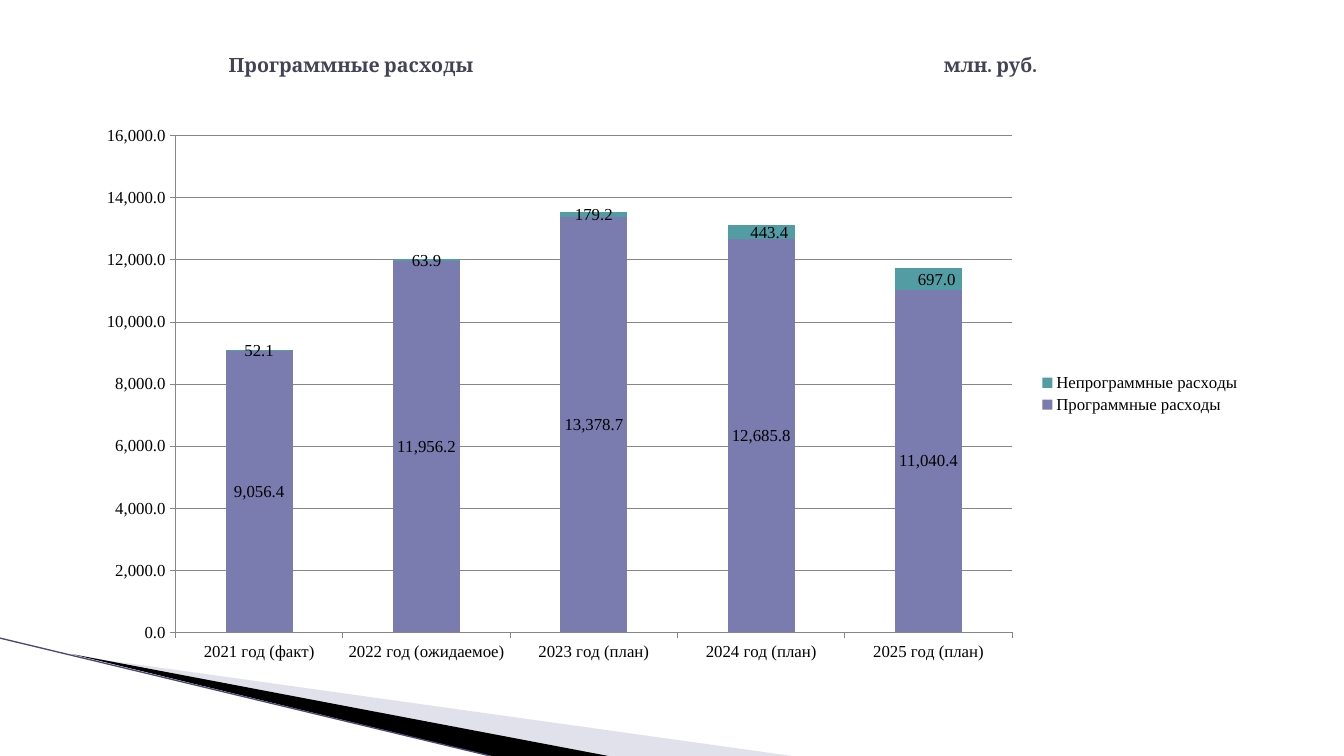
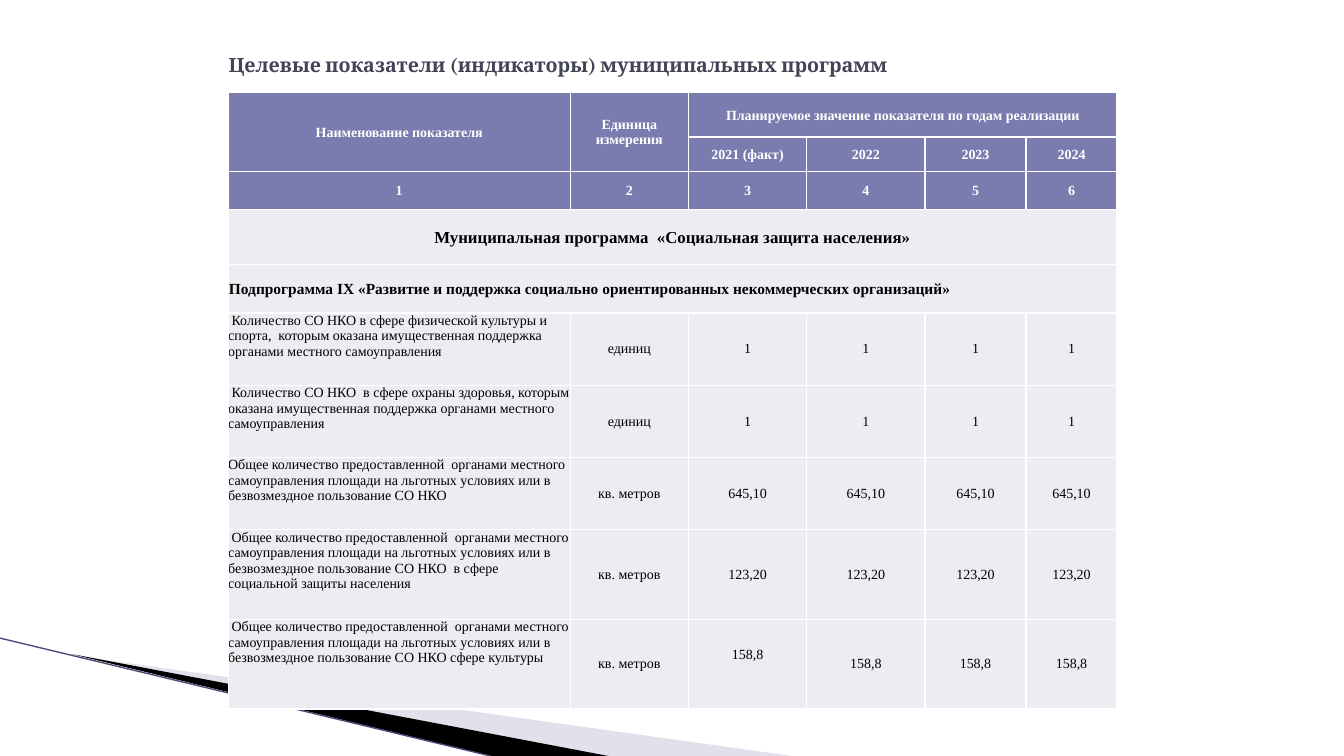
"""Build two slides on municipal programme spending and its target indicators."""
from lxml.etree import SubElement
from pptx import Presentation
from pptx.chart.data import CategoryChartData
from pptx.dml.color import RGBColor
from pptx.enum.chart import XL_CHART_TYPE as ChartType, XL_LEGEND_POSITION as LegendPos, XL_TICK_MARK as Tick
from pptx.enum.shapes import MSO_CONNECTOR as Connector
from pptx.enum.text import MSO_ANCHOR as Anchor, PP_ALIGN as Align
from pptx.oxml import parse_xml
from pptx.oxml.ns import nsdecls, qn
from pptx.util import Cm, Pt

WHITE = RGBColor(0xFF, 0xFF, 0xFF)
BLACK = RGBColor(0x00, 0x00, 0x00)
INK = RGBColor(0x42, 0x44, 0x56)
VIOLET = RGBColor(0x7A, 0x7B, 0xAE)
TEAL = RGBColor(0x52, 0x9C, 0xA4)
LILAC = RGBColor(0xB6, 0xB6, 0xD1)
PALE = RGBColor(0xEC, 0xEC, 0xF2)
EDGE = RGBColor(0x4A, 0x4A, 0x78)
GRID = RGBColor(0x86, 0x86, 0x86)
TITLE_FONT, BODY_FONT = "Cambria", "Times New Roman"
NUMBER = "#,##0.0"

SWOOSHES = [
    (LILAC, 40, [(1.85, 16.52), (19.96, 19.05), (15.3, 19.05)]),
    (BLACK, 100, [(1.8, 16.48), (15.33, 19.05), (12.38, 19.05)]),
]


def style(font, name, size, color, bold=False):
    font.name, font.size, font.bold = name, Pt(size), bold
    font.color.rgb = color


def chart_layout(target, **values):
    layout = parse_xml(f"<c:layout {nsdecls('c')}><c:manualLayout/></c:layout>")
    for tag, value in values.items():
        SubElement(layout[0], qn(f"c:{tag}")).set("val", str(value))
    for old in target.findall(qn("c:layout")):
        target.remove(old)
    target.insert(1 if target.find(qn("c:idx")) is not None else 0, layout)


prs = Presentation()
prs.slide_width, prs.slide_height = Cm(33.87), Cm(19.05)
slides = []
for heading in ("Программные расходы\tмлн. руб.", "Целевые показатели (индикаторы) муниципальных программ"):
    slide = prs.slides.add_slide(prs.slide_layouts[6])
    slides.append(slide)
    for color, opacity, points in SWOOSHES:
        start, *rest = [(Cm(x), Cm(y)) for x, y in points]
        builder = slide.shapes.build_freeform(*start)
        builder.add_line_segments(rest, close=True)
        swoosh = builder.convert_to_shape()
        swoosh.shadow.inherit = False
        swoosh.fill.solid()
        swoosh.fill.fore_color.rgb = color
        swoosh.line.fill.background()
        if opacity < 100:
            tint = swoosh.element.xpath(".//a:solidFill/a:srgbClr")[0]
            SubElement(tint, qn("a:alpha")).set("val", str(opacity * 1000))
    edge = slide.shapes.add_connector(Connector.STRAIGHT, 0, Cm(16.08), Cm(12.36), Cm(19.05))
    edge.line.color.rgb, edge.line.width = EDGE, Pt(0.95)
    SubElement(edge.element.spPr, qn("a:effectLst"))

    title = slide.shapes.add_textbox(Cm(5.51), Cm(0.76), Cm(22.86), Cm(1.75)).text_frame
    title.word_wrap, title.vertical_anchor = True, Anchor.MIDDLE
    paragraph = title.paragraphs[0]
    if "\t" in heading:
        tabs = SubElement(paragraph._p.get_or_add_pPr(), qn("a:tabLst"))
        stop = SubElement(tabs, qn("a:tab"))
        stop.set("pos", str(Cm(18.03)))
        stop.set("algn", "l")
    run = paragraph.add_run()
    run.text = heading
    style(run.font, TITLE_FONT, 14, INK, True)

spending_slide, targets_slide = slides

spending = CategoryChartData(number_format=NUMBER)
spending.categories = ["2021 год (факт)", "2022 год (ожидаемое)", "2023 год (план)", "2024 год (план)", "2025 год (план)"]
spending.add_series("Программные расходы", (9056.4, 11956.2, 13378.7, 12685.8, 11040.4))
spending.add_series("Непрограммные расходы", (52.1, 63.9, 179.2, 443.4, 697.0))
chart = spending_slide.shapes.add_chart(
    ChartType.COLUMN_STACKED, Cm(2.13), Cm(2.92), Cm(29.41), Cm(14), spending).chart
style(chart.font, BODY_FONT, 12, BLACK)
chart.has_title = False
chart.has_legend = True
chart.legend.position, chart.legend.include_in_layout = LegendPos.RIGHT, False
style(chart.legend.font, BODY_FONT, 12, BLACK)
for axis in (chart.category_axis, chart.value_axis):
    axis.major_tick_mark, axis.minor_tick_mark = Tick.OUTSIDE, Tick.NONE
    axis.format.line.color.rgb = GRID
    style(axis.tick_labels.font, BODY_FONT, 12, BLACK)
amounts = chart.value_axis
amounts.minimum_scale, amounts.maximum_scale, amounts.major_unit = 0, 16000, 2000
amounts.has_major_gridlines = True
amounts.major_gridlines.format.line.color.rgb = GRID
amounts.tick_labels.number_format, amounts.tick_labels.number_format_is_linked = NUMBER, False
columns = chart.plots[0]
columns.gap_width, columns.overlap, columns.vary_by_categories = 150, 100, False
for series, color in zip(columns.series, (VIOLET, TEAL)):
    series.format.fill.solid()
    series.format.fill.fore_color.rgb = color
    labels = series.data_labels
    labels.show_value = True
    labels.number_format, labels.number_format_is_linked = NUMBER, False
    style(labels.font, BODY_FONT, 12, BLACK)
for index in (3, 4):
    style(columns.series[1].points[index].data_label.font, BODY_FONT, 12, BLACK)
for label in chart.element.xpath(".//c:dLbl"):
    label.insert(1, parse_xml(f'<c:numFmt {nsdecls("c")} formatCode="{NUMBER}" sourceLinked="0"/>'))
    chart_layout(label, x=0.007, y=0.002)
chart_layout(chart.element.xpath(".//c:plotArea")[0], layoutTarget="inner",
             xMode="edge", yMode="edge", x=0.078, y=0.036, w=0.717, h=0.894)

AREA = "Общее количество предоставленной  органами местного самоуправления площади на льготных условиях или в безвозмездное пользование СО НКО"
ROWS = [
    ["Наименование показателя", "Единица измерения", "Планируемое значение показателя по годам реализации"],
    ["", "", "2021 (факт)", "2022", "2023", "2024"],
    ["1", "2", "3", "4", "5", "6"],
    ["Муниципальная программа  «Социальная защита населения»"],
    ["Подпрограмма IX «Развитие и поддержка социально ориентированных некоммерческих организаций»"],
    [" Количество СО НКО в сфере физической культуры и спорта,  которым оказана имущественная поддержка органами местного самоуправления", "единиц"] + ["1"] * 4,
    [" Количество СО НКО  в сфере охраны здоровья, которым оказана имущественная поддержка органами местного самоуправления", "единиц"] + ["1"] * 4,
    [AREA, "кв. метров"] + ["645,10"] * 4,
    [f" {AREA}  в сфере социальной защиты населения", "кв. метров"] + ["123,20"] * 4,
    [f" {AREA} сфере культуры", "кв. метров"] + ["158,8"] * 4,
]
WIDTHS = [8.62, 2.98, 2.98, 2.98, 2.55, 2.29]
HEIGHTS = [1.11, 0.8, 0.96, 1.39, 1.22, 1.82, 1.82, 1.82, 2.26, 2.26]
MERGES = [(0, 0, 1, 0), (0, 1, 1, 1), (0, 2, 0, 5), (3, 0, 3, 5), (4, 0, 4, 5)]
HEADER_ROWS, PROGRAMME_ROW, SUBPROGRAMME_ROW = 3, 3, 4

targets = targets_slide.shapes.add_table(
    len(ROWS), len(WIDTHS), Cm(5.75), Cm(2.34), Cm(sum(WIDTHS)), Cm(sum(HEIGHTS))).table
targets.first_row = targets.horz_banding = False
for column, width in zip(targets.columns, WIDTHS):
    column.width = Cm(width)
for row, height in zip(targets.rows, HEIGHTS):
    row.height = Cm(height)
for top, left, bottom, right in MERGES:
    targets.cell(top, left).merge(targets.cell(bottom, right))
for r, texts in enumerate(ROWS):
    is_header, is_indicator = r < HEADER_ROWS, r > SUBPROGRAMME_ROW
    size = {PROGRAMME_ROW: 12, SUBPROGRAMME_ROW: 11}.get(r, 10)
    for c in range(len(WIDTHS)):
        cell = targets.cell(r, c)
        is_name = is_indicator and c == 0
        cell.margin_left = cell.margin_right = cell.margin_top = Cm(0 if is_indicator else 0.02)
        cell.margin_bottom = 0
        cell.vertical_anchor = Anchor.TOP if is_name else Anchor.MIDDLE
        cell.fill.solid()
        cell.fill.fore_color.rgb = VIOLET if is_header else PALE
        for position, side in enumerate(("lnL", "lnR", "lnT", "lnB")):
            cell._tc.get_or_add_tcPr().insert(position, parse_xml(
                f'<a:{side} {nsdecls("a")} w="12700"><a:solidFill><a:srgbClr val="{WHITE}"/></a:solidFill></a:{side}>'))
        if c < len(texts) and texts[c]:
            paragraph = cell.text_frame.paragraphs[0]
            paragraph.alignment = Align.LEFT if is_name or r == SUBPROGRAMME_ROW else Align.CENTER
            run = paragraph.add_run()
            run.text = texts[c]
            style(run.font, BODY_FONT, size, WHITE if is_header else BLACK, not is_indicator)
targets.cell(len(ROWS) - 1, 2).margin_bottom = Cm(0.45)

prs.save("out.pptx")
